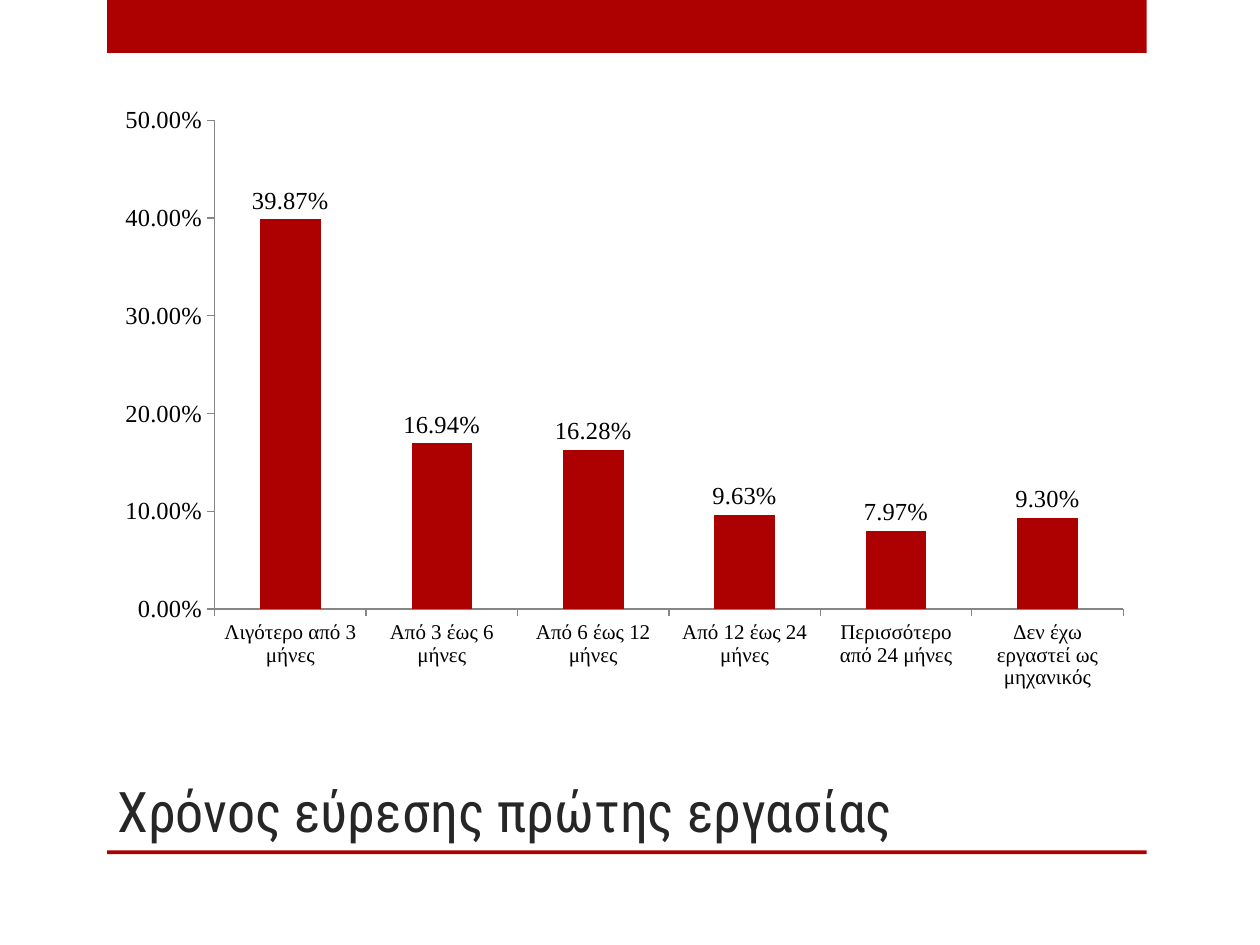
import pptx
import pptx.chart.data
import pptx.dml.color
import pptx.enum.chart
import pptx.enum.shapes
import pptx.enum.text
import pptx.util
from pptx.util import Inches

RED = pptx.dml.color.RGBColor(0xAD, 0x01, 0x01)
DARK = pptx.dml.color.RGBColor(0x26, 0x26, 0x26)
BLACK = pptx.dml.color.RGBColor(0, 0, 0)
GRAY = pptx.dml.color.RGBColor(0x86, 0x86, 0x86)
TITLE_FONT = "Roboto Condensed"
CHART_FONT = "Times New Roman"
PERCENT = "0.00%"

TIME_TO_FIRST_JOB = {
    "Λιγότερο από 3 μήνες": 0.3987,
    "Από 3 έως 6 μήνες": 0.1694,
    "Από 6 έως 12 μήνες": 0.1628,
    "Από 12 έως 24 μήνες": 0.0963,
    "Περισσότερο από 24 μήνες": 0.0797,
    "Δεν έχω εργαστεί ως μηχανικός": 0.093,
}


def format_font(font, name, size, color):
    font.name = name
    font.size = pptx.util.Pt(size)
    font.bold = False
    font.color.rgb = color


def write_text(frame, text, *, font, size, color, align, anchor):
    frame.word_wrap = True
    frame.auto_size = pptx.enum.text.MSO_AUTO_SIZE.NONE
    frame.vertical_anchor = anchor
    para = frame.paragraphs[0]
    para.alignment = align
    span = para.add_run()
    span.text = text
    format_font(span.font, font, size, color)


def add_band(page, top, height):
    band = page.shapes.add_shape(
        pptx.enum.shapes.MSO_SHAPE.RECTANGLE,
        Inches(0.85), Inches(top), Inches(8.25), Inches(height))
    band.shadow.inherit = False
    band.fill.solid()
    band.fill.fore_color.rgb = RED
    band.line.fill.background()


def add_title(page, text):
    title = page.shapes.title
    title.left, title.top = Inches(0.83), Inches(5.64)
    title.width, title.height = Inches(7.42), Inches(1.11)
    write_text(title.text_frame, text, font=TITLE_FONT, size=32, color=DARK,
               align=pptx.enum.text.PP_ALIGN.LEFT,
               anchor=pptx.enum.text.MSO_ANCHOR.BOTTOM)


def format_axis(axis, size):
    axis.has_major_gridlines = False
    axis.major_tick_mark = pptx.enum.chart.XL_TICK_MARK.OUTSIDE
    axis.minor_tick_mark = pptx.enum.chart.XL_TICK_MARK.NONE
    axis.format.line.color.rgb = GRAY
    axis.format.line.width = pptx.util.Pt(0.75)
    format_font(axis.tick_labels.font, CHART_FONT, size, BLACK)


def add_column_chart(page, values):
    data = pptx.chart.data.CategoryChartData(number_format=PERCENT)
    data.categories = list(values)
    data.add_series("Series 1", list(values.values()))
    chart = page.shapes.add_chart(
        pptx.enum.chart.XL_CHART_TYPE.COLUMN_CLUSTERED,
        Inches(0.83), Inches(0.75), Inches(8.25), Inches(4.81), data).chart
    chart.has_title = False
    chart.has_legend = False
    format_font(chart.font, CHART_FONT, 18, BLACK)

    # Axes
    format_axis(chart.category_axis, 12)
    value_axis = chart.value_axis
    format_axis(value_axis, 14)
    value_axis.minimum_scale = 0
    value_axis.maximum_scale = 0.5
    value_axis.major_unit = 0.1
    value_axis.tick_labels.number_format = PERCENT
    value_axis.tick_labels.number_format_is_linked = False

    # Columns and their labels
    plot = chart.plots[0]
    plot.gap_width = 150
    plot.vary_by_categories = False
    series = plot.series[0]
    series.format.fill.solid()
    series.format.fill.fore_color.rgb = RED
    labels = series.data_labels
    labels.show_value = True
    labels.number_format = PERCENT
    labels.number_format_is_linked = False
    labels.position = pptx.enum.chart.XL_LABEL_POSITION.OUTSIDE_END
    format_font(labels.font, CHART_FONT, 14, BLACK)


def main():
    deck = pptx.Presentation()
    deck.slide_width, deck.slide_height = Inches(10), Inches(7.5)
    page = deck.slides.add_slide(deck.slide_layouts[5])  # Title Only

    # Top band and the rule under the title
    add_band(page, 0, 0.42)
    add_band(page, 6.75, 0.03)

    add_title(page, "Χρόνος εύρεσης πρώτης εργασίας")
    add_column_chart(page, TIME_TO_FIRST_JOB)
    deck.save("out.pptx")


if __name__ == "__main__":
    main()
